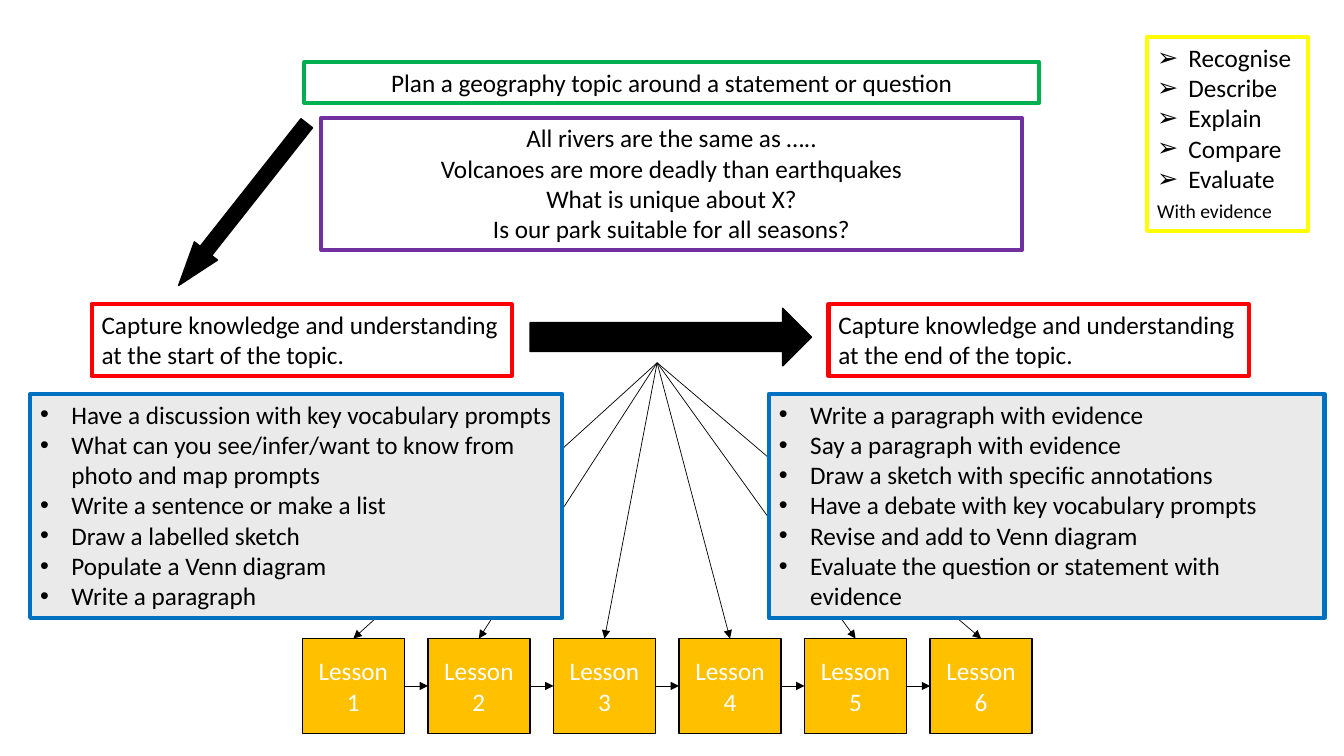
from lxml.etree import SubElement
from pptx import Presentation
from pptx.dml.color import RGBColor
from pptx.enum.shapes import MSO_CONNECTOR, MSO_SHAPE
from pptx.enum.text import MSO_ANCHOR, MSO_AUTO_SIZE, PP_ALIGN
from pptx.oxml.ns import qn
from pptx.util import Cm, Pt

BLACK = RGBColor(0x00, 0x00, 0x00)
WHITE = RGBColor(0xFF, 0xFF, 0xFF)
RED = RGBColor(0xFF, 0x00, 0x00)
GREEN = RGBColor(0x00, 0xB0, 0x50)
PURPLE = RGBColor(0x70, 0x30, 0xA0)
BLUE = RGBColor(0x00, 0x70, 0xC0)
YELLOW = RGBColor(0xFF, 0xFF, 0x00)
AMBER = RGBColor(0xFF, 0xC0, 0x00)
GREY = RGBColor(0xEA, 0xEA, 0xEA)

FONT = "Calibri"
HANGING = Cm(0.79)

START_IDEAS = [
    "Have a discussion with key vocabulary prompts",
    "What can you see/infer/want to know from photo and map prompts",
    "Write a sentence or make a list",
    "Draw a labelled sketch",
    "Populate a Venn diagram",
    "Write a paragraph",
]
END_IDEAS = [
    "Write a paragraph with evidence",
    "Say a paragraph with evidence",
    "Draw a sketch with specific annotations",
    "Have a debate with key vocabulary prompts",
    "Revise and add to Venn diagram",
    "Evaluate the question or statement with evidence",
]
EXAMPLES = [
    "All rivers are the same as …..",
    "Volcanoes are more deadly than earthquakes",
    "What is unique about X?",
    "Is our park suitable for all seasons?",
]
SKILLS = ["Recognise", "Describe", "Explain", "Compare", "Evaluate"]


def format_run(run, size=18, color=BLACK):
    run.font.name = FONT
    run.font.size = Pt(size)
    run.font.color.rgb = color


def add_bullet(paragraph, symbol):
    properties = paragraph._p.get_or_add_pPr()
    properties.set("marL", str(HANGING))
    properties.set("indent", str(-HANGING))
    SubElement(properties, qn("a:buFont")).set("typeface", "Arial")
    SubElement(properties, qn("a:buChar")).set("char", symbol)


def add_frame(slide, box, lines, border, fill=None, align=PP_ALIGN.LEFT, bullet=None):
    """Outlined text frame with one paragraph per line."""
    frame = slide.shapes.add_textbox(*map(Cm, box))
    frame.line.color.rgb = border
    frame.line.width = Pt(3)
    if fill is not None:
        frame.fill.solid()
        frame.fill.fore_color.rgb = fill
    content = frame.text_frame
    content.word_wrap = True
    content.auto_size = MSO_AUTO_SIZE.SHAPE_TO_FIT_TEXT
    content.text = "\n".join(lines)
    for paragraph in content.paragraphs:
        paragraph.alignment = align
        format_run(paragraph.runs[0])
        if bullet:
            add_bullet(paragraph, bullet)
    return frame


def add_solid(slide, preset, box, fill):
    """Filled preset shape with a thin black outline."""
    solid = slide.shapes.add_shape(preset, *map(Cm, box))
    solid.shadow.inherit = False
    solid.fill.solid()
    solid.fill.fore_color.rgb = fill
    solid.line.color.rgb = BLACK
    solid.line.width = Pt(1)
    return solid


def add_thin_arrow(slide, target, side, source=None, start=(0, 0)):
    """Arrow to one side of target, from the right of source or from a point."""
    x, y = map(Cm, start)
    arrow = slide.shapes.add_connector(MSO_CONNECTOR.STRAIGHT, x, y, x, y)
    if source is not None:
        arrow.begin_connect(source, 3)
    arrow.end_connect(target, side)
    arrow.line.color.rgb = BLACK
    arrow.line.width = Pt(0.5)
    SubElement(arrow.line._get_or_add_ln(), qn("a:tailEnd")).set("type", "triangle")
    SubElement(arrow._element.spPr, qn("a:effectLst"))


def add_lessons(slide, box, apex, count=6):
    """Row of linked lessons, fanned out from the apex."""
    left, top, width, height = box
    lesson_width = 2.57
    step = (width - lesson_width) / (count - 1)
    lessons = []
    for i in range(count):
        lesson = add_solid(slide, MSO_SHAPE.RECTANGLE,
                           (left + i * step, top, lesson_width, height), AMBER)
        lesson.text_frame.text = f"Lesson {i + 1}"
        lesson.text_frame.word_wrap = True
        lesson.text_frame.vertical_anchor = MSO_ANCHOR.MIDDLE
        title = lesson.text_frame.paragraphs[0]
        title.alignment = PP_ALIGN.CENTER
        format_run(title.runs[0], color=WHITE)
        lessons.append(lesson)
    for lesson in lessons:
        add_thin_arrow(slide, lesson, 0, start=apex)
    for previous, following in zip(lessons, lessons[1:]):
        add_thin_arrow(slide, following, 1, source=previous)


def add_topic(slide, box):
    """Topic heading above its example questions."""
    left, top, width, _ = box
    add_frame(slide, (left, top, width, 1.02),
              ["Plan a geography topic around a statement or question"],
              GREEN, align=PP_ALIGN.CENTER)
    add_frame(slide, (left + 0.43, top + 1.4, width - 0.87, 3.33),
              EXAMPLES, PURPLE, align=PP_ALIGN.CENTER)


def add_stage(slide, box, heading_inset, moment, ideas):
    """Capture heading above a panel of ideas."""
    left, top, width, _ = box
    add_frame(slide, (left + heading_inset, top, 10.59, 1.8),
              [f"Capture knowledge and understanding at the {moment} of the topic."], RED)
    add_frame(slide, (left, top + 2.26, width, 5.64), ideas, BLUE, GREY, bullet="•")


def add_skills(slide, box):
    """Skill list with a smaller closing line."""
    skills = add_frame(slide, box, SKILLS, YELLOW, bullet="➢")
    closing = skills.text_frame.add_paragraph()
    for text, size in (("With evidence", 14), (" ", 18)):
        run = closing.add_run()
        run.text = text
        format_run(run, size)


def main():
    prs = Presentation()
    prs.slide_width, prs.slide_height = Cm(33.87), Cm(19.05)
    slide = prs.slides.add_slide(prs.slide_layouts[6])

    add_topic(slide, (7.67, 1.57, 18.52, 4.73))

    # Block arrows: topic to start, start to end
    add_solid(slide, MSO_SHAPE.RIGHT_ARROW, (13.36, 7.77, 7.09, 1.45), BLACK)
    to_start = add_solid(slide, MSO_SHAPE.RIGHT_ARROW, (3.51, 4.78, 5.21, 0.74), BLACK)
    to_start.adjustments[1] = 1.5
    to_start.rotation = 128.3

    # Lessons come first so the panels cover part of the fan
    add_lessons(slide, (7.62, 16.09, 18.39, 2.39), apex=(16.56, 9.14))
    add_stage(slide, (0.76, 7.67, 13.41, 7.9), 1.55, "start", START_IDEAS)
    add_stage(slide, (19.38, 7.67, 14, 7.9), 1.5, "end", END_IDEAS)
    add_skills(slide, (28.91, 0.94, 4.06, 4.88))

    prs.save("out.pptx")


if __name__ == "__main__":
    main()
